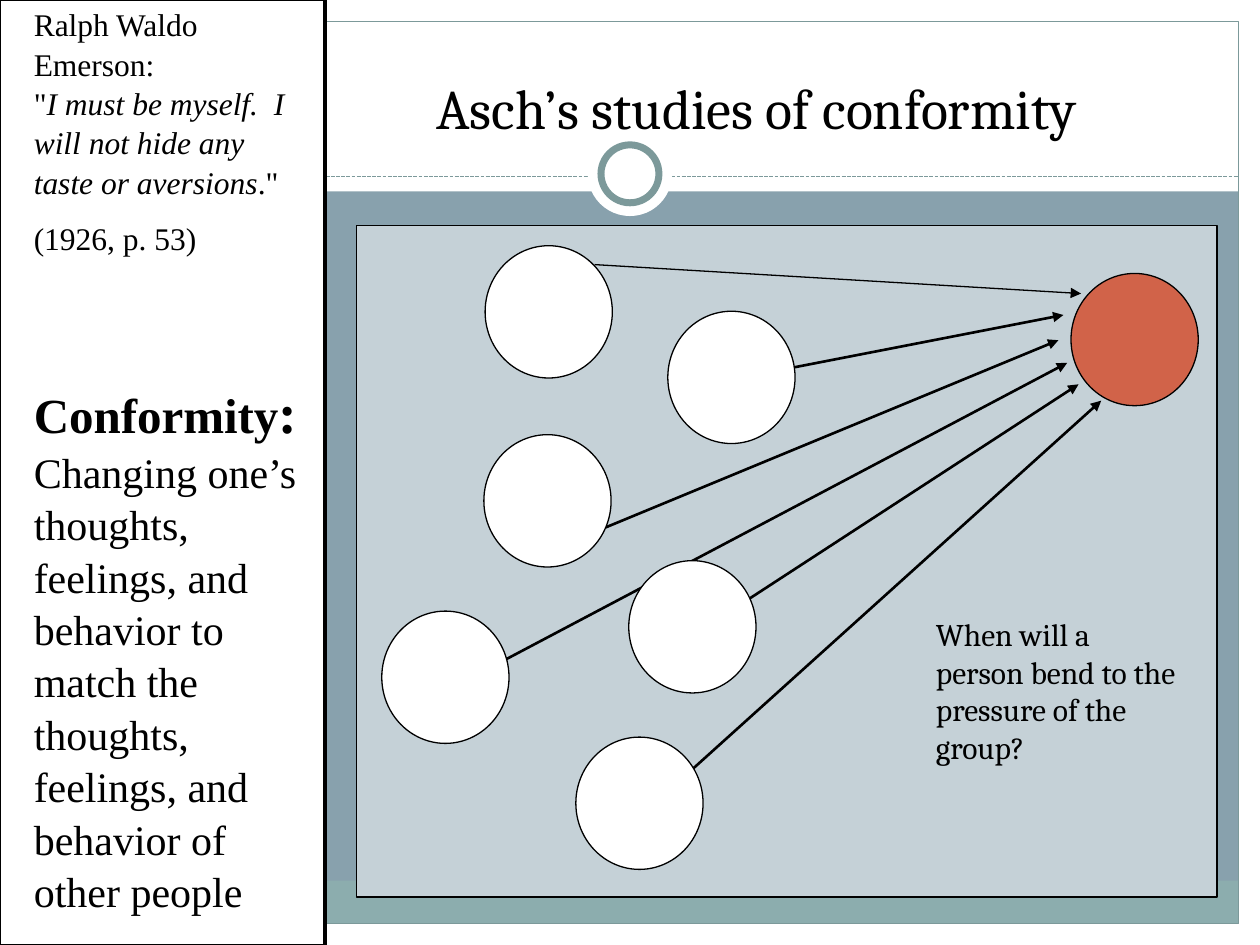
from lxml.etree import SubElement
from pptx import Presentation
from pptx.dml.color import RGBColor
from pptx.enum.dml import MSO_LINE
from pptx.enum.shapes import MSO_CONNECTOR, MSO_SHAPE
from pptx.enum.text import MSO_ANCHOR, PP_ALIGN
from pptx.oxml.ns import qn
from pptx.util import Inches, Pt

WHITE, BLACK, BLUE, TEAL, EDGE = "FFFFFF", "000000", "88A1AD", "8CADAE", "7C999A"
PANEL, RED = "C5D1D7", "D16349"
SERIF, SANS_TITLE = "Times New Roman", "Cambria"

# Circle position, arrow start, arrow end, arrow width
GROUP = [
    ((3.85, 1.95), (4.72, 2.10), (8.58, 2.33), 0.75),
    ((5.30, 2.47), (6.28, 2.92), (8.44, 2.50), 1.5),
    ((3.84, 3.45), (4.70, 4.23), (8.40, 2.70), 1.5),
    ((3.03, 4.85), (3.87, 5.31), (8.47, 2.88), 1.5),
    ((4.99, 4.45), (5.52, 5.03), (8.56, 3.05), 1.5),
    ((4.57, 5.85), (5.49, 6.11), (8.74, 3.18), 1.5),
]


def rgb(value):
    return RGBColor.from_string(value)


def add_box(s, box, fill=None, line=None, width=0.75, kind=MSO_SHAPE.RECTANGLE):
    sp = s.shapes.add_shape(kind, *map(Inches, box))
    sp.shadow.inherit = False
    if fill:
        sp.fill.solid()
        sp.fill.fore_color.rgb = rgb(fill)
    else:
        sp.fill.background()
    if line:
        sp.line.color.rgb = rgb(line)
        sp.line.width = Pt(width)
    else:
        sp.line.fill.background()
    return sp


def add_line(s, start, end, color=BLACK, width=0.75, arrow=False):
    cx = s.shapes.add_connector(MSO_CONNECTOR.STRAIGHT, *map(Inches, start + end))
    cx.line.color.rgb = rgb(color)
    cx.line.width = Pt(width)
    if arrow:
        SubElement(cx.line._get_or_add_ln(), qn("a:tailEnd"), type="triangle")
    SubElement(cx._element.spPr, qn("a:effectLst"))
    return cx


def add_run(p, text, size, name=SERIF, **formats):
    r = p.add_run()
    r.text = text
    r.font.color.rgb = rgb(BLACK)
    for key, value in {"size": Pt(size), "name": name, **formats}.items():
        setattr(r.font, key, value)


def add_text(s, box, paragraphs, anchor=MSO_ANCHOR.TOP, spacing=1.0):
    """Each paragraph is (space before in points, list of (text, size, formats))."""
    tf = s.shapes.add_textbox(*map(Inches, box)).text_frame
    tf.word_wrap = True
    tf.vertical_anchor = anchor
    for i, (before, runs) in enumerate(paragraphs):
        p = tf.add_paragraph() if i else tf.paragraphs[0]
        p.space_before = Pt(before)
        p.line_spacing = spacing
        for text, size, formats in runs:
            add_run(p, text, size, **formats)


def add_frame(s, width, height):
    """White margins, header band, footer strip and the ring on the dashed rule."""
    m, header = 0.17, 1.52
    for box in [(0, height - m, width, m), (0, 0, width, header),
                (0, 0, m, height), (width - m, 0, m, height)]:
        add_box(s, box, WHITE)
    add_box(s, (m, 6.99, width - 2 * m, 0.34), TEAL)
    add_box(s, (m, m, width - 2 * m, height - 2 * m), line=EDGE)
    rule = add_line(s, (m, 1.4), (width - m, 1.4), EDGE)
    rule.line.dash_style = MSO_LINE.SQUARE_DOT
    for size, line in [(0.67, None), (0.46, EDGE)]:
        box = (width / 2 - size / 2, 1.38 - size / 2, size, size)
        add_box(s, box, WHITE, line, 4, MSO_SHAPE.OVAL)


def add_sidebar(s, x, y, w, h):
    add_box(s, (x, y, w, h), WHITE, BLACK)
    italic, bold = {"italic": True}, {"bold": True}
    paragraphs = [
        (0, [("Ralph Waldo Emerson:", 18, {})]),
        (0, [('"', 18, {}),
             ("I must be myself.  I will not hide any taste or aversions", 18, italic),
             ('."', 18, {})]),
        (10, [("(1926, p. 53)", 18, {})]),
        (67, [("Conformity", 28, bold), (":", 32, bold),
              (" Changing one’s thoughts, feelings, and behavior to match the "
               "thoughts, feelings, and behavior of other people", 24, {})]),
    ]
    add_text(s, (x + 0.17, y + 0.05, w - 0.25, h - 0.3), paragraphs,
             MSO_ANCHOR.MIDDLE, 1.04)
    add_line(s, (x + w, y), (x + w, y + h), width=2)


def set_title(s, box, text):
    title = s.shapes.title
    title.left, title.top, title.width, title.height = map(Inches, box)
    tf = title.text_frame
    tf.vertical_anchor = MSO_ANCHOR.BOTTOM
    p = tf.paragraphs[0]
    p.alignment = PP_ALIGN.CENTER
    add_run(p, text, 32, SANS_TITLE)
    s.shapes._spTree.append(title._element)  # bring in front of the header band


def add_diagram(s, x, y, w, h):
    """Six group members pressing on one person."""
    add_box(s, (x, y, w, h), PANEL, BLACK)
    for _, start, end, width in GROUP:
        add_line(s, start, end, width=width, arrow=True)
    circles = [(pos, WHITE) for pos, *_ in GROUP] + [((8.5, 2.17), RED)]
    for pos, fill in circles:
        add_box(s, pos + (1.01, 1.05), fill, BLACK, kind=MSO_SHAPE.OVAL)
    question = "When will a person bend to the pressure of the group?"
    add_text(s, (x + 4.5, y + 3.04, 2.17, 1.3),
             [(0, [(question, 18, {"name": SANS_TITLE})])])


def main():
    prs = Presentation()
    prs.slide_width, prs.slide_height = Inches(10), Inches(7.5)
    s = prs.slides.add_slide(prs.slide_layouts[5])
    s.background.fill.solid()
    s.background.fill.fore_color.rgb = rgb(BLUE)
    add_frame(s, 10, 7.5)
    add_sidebar(s, 0, 0, 2.58, 7.5)
    set_title(s, (2.92, 0.5, 6.17, 0.67), "Asch’s studies of conformity")
    add_diagram(s, 2.83, 1.79, 6.83, 5.33)
    prs.save("out.pptx")


if __name__ == "__main__":
    main()
